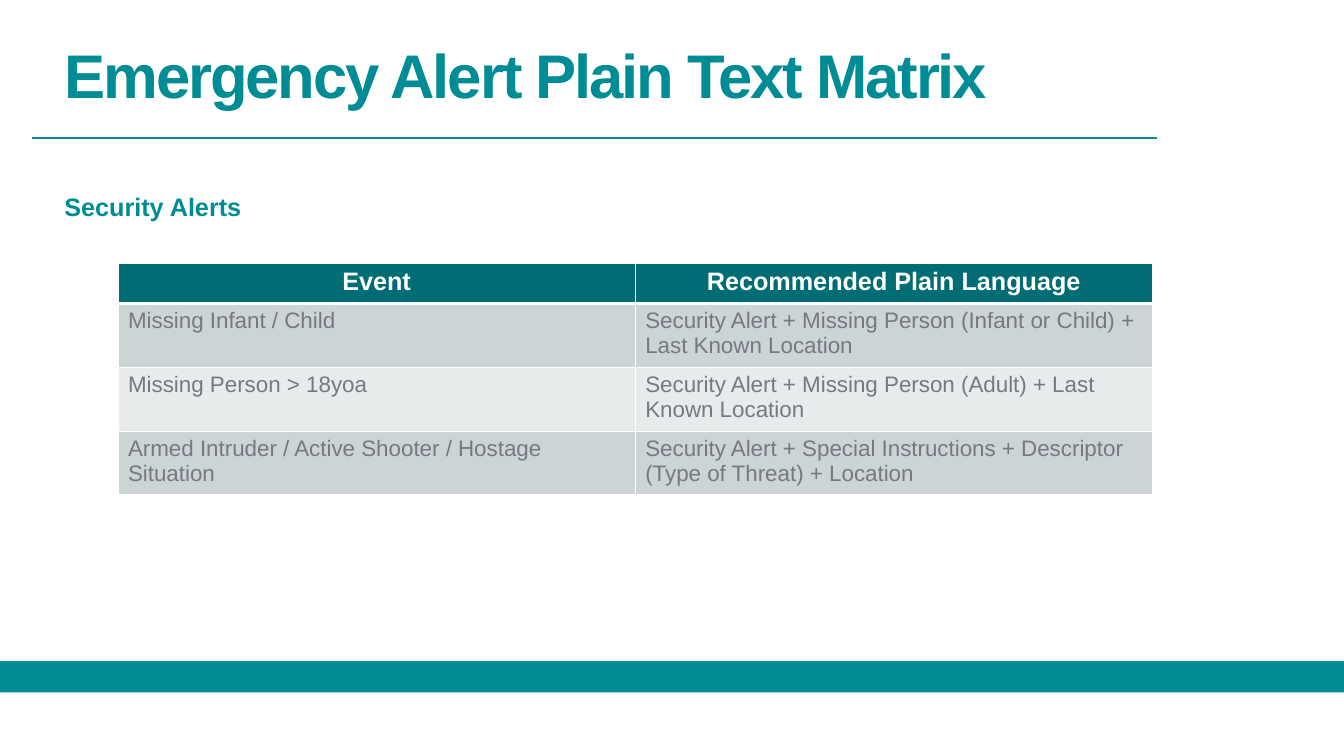
"""Build the Emergency Alert Plain Text Matrix slide."""
import pptx
import pptx.dml.color
import pptx.enum.shapes
import pptx.enum.text
import pptx.oxml
import pptx.oxml.ns
import pptx.util
from pptx.util import Inches

TEAL = pptx.dml.color.RGBColor(0x00, 0x8C, 0x95)
SUBTITLE_TEAL = pptx.dml.color.RGBColor(0x00, 0x8C, 0x94)
HEADER_TEAL = pptx.dml.color.RGBColor(0x00, 0x6C, 0x74)
DARK_BAND = pptx.dml.color.RGBColor(0xCC, 0xD4, 0xD6)
LIGHT_BAND = pptx.dml.color.RGBColor(0xE7, 0xEB, 0xEB)
GRAY = pptx.dml.color.RGBColor(0x76, 0x78, 0x82)
WHITE = pptx.dml.color.RGBColor(0xFF, 0xFF, 0xFF)

ROWS = [
    ("Event", "Recommended Plain Language"),
    ("Missing Infant / Child",
     "Security Alert + Missing Person (Infant or Child) + Last Known Location"),
    ("Missing Person > 18yoa",
     "Security Alert + Missing Person (Adult) + Last Known Location"),
    ("Armed Intruder / Active Shooter / Hostage Situation",
     "Security Alert + Special Instructions + Descriptor (Type of Threat) + Location"),
]


def write_text(text_frame, text, size, color, bold):
    text_frame.text = text
    run = text_frame.paragraphs[0].runs[0]
    run.font.name = "Arial"
    run.font.size = pptx.util.Pt(size)
    run.font.color.rgb = color
    run.font.bold = bold
    return run


def set_borders(cell, bottom_width):
    properties = cell._tc.get_or_add_tcPr()
    widths = {"lnL": 1, "lnR": 1, "lnT": 1, "lnB": bottom_width}
    for position, (side, width) in enumerate(widths.items()):
        border = pptx.oxml.parse_xml(
            f'<a:{side} {pptx.oxml.ns.nsdecls("a")} w="{pptx.util.Pt(width)}">'
            f'<a:solidFill><a:srgbClr val="{WHITE}"/></a:solidFill></a:{side}>')
        properties.insert(position, border)


presentation = pptx.Presentation()
presentation.slide_width = Inches(13.33)
presentation.slide_height = Inches(7.5)
slide = presentation.slides.add_slide(presentation.slide_layouts[6])

footer_bar = slide.shapes.add_shape(
    pptx.enum.shapes.MSO_SHAPE.RECTANGLE,
    Inches(0), Inches(6.56), presentation.slide_width, Inches(0.31))
footer_bar.shadow.inherit = False
footer_bar.fill.solid()
footer_bar.fill.fore_color.rgb = TEAL
footer_bar.line.fill.background()

title = slide.shapes.add_textbox(Inches(0.54), Inches(0.4), Inches(11.5), Inches(1.45))
title.text_frame.word_wrap = True
title_run = write_text(title.text_frame, "Emergency Alert Plain Text Matrix", 44, TEAL, True)
title_run.font._element.set("spc", "-150")
title.text_frame.paragraphs[0].line_spacing = 0.9

title_rule = slide.shapes.add_connector(
    pptx.enum.shapes.MSO_CONNECTOR.STRAIGHT,
    Inches(0.32), Inches(1.37), Inches(11.48), Inches(1.37))
title_rule.line.color.rgb = TEAL
title_rule.line.width = pptx.util.Pt(1)
title_rule._element.spPr.append(
    pptx.oxml.parse_xml(f'<a:effectLst {pptx.oxml.ns.nsdecls("a")}/>'))

subtitle = slide.shapes.add_textbox(Inches(0.54), Inches(1.85), Inches(1.97), Inches(0.4))
subtitle.text_frame.word_wrap = False
subtitle.text_frame.auto_size = pptx.enum.text.MSO_AUTO_SIZE.SHAPE_TO_FIT_TEXT
write_text(subtitle.text_frame, "Security Alerts", 18, SUBTITLE_TEAL, True)

alert_table = slide.shapes.add_table(
    len(ROWS), 2, Inches(1.17), Inches(2.61), Inches(10.26), Inches(2.3)).table
for column in alert_table.columns:
    column.width = Inches(5.13)

for row_index, texts in enumerate(ROWS):
    is_header = row_index == 0
    alert_table.rows[row_index].height = Inches(0.4 if is_header else 0.63)
    band = DARK_BAND if row_index % 2 else LIGHT_BAND
    for column_index, text in enumerate(texts):
        cell = alert_table.cell(row_index, column_index)
        cell.fill.solid()
        cell.fill.fore_color.rgb = HEADER_TEAL if is_header else band
        set_borders(cell, 3 if is_header else 1)
        if is_header:
            write_text(cell.text_frame, text, 18, WHITE, True)
            cell.text_frame.paragraphs[0].alignment = pptx.enum.text.PP_ALIGN.CENTER
        else:
            write_text(cell.text_frame, text, 16, GRAY, False)

presentation.save("out.pptx")
